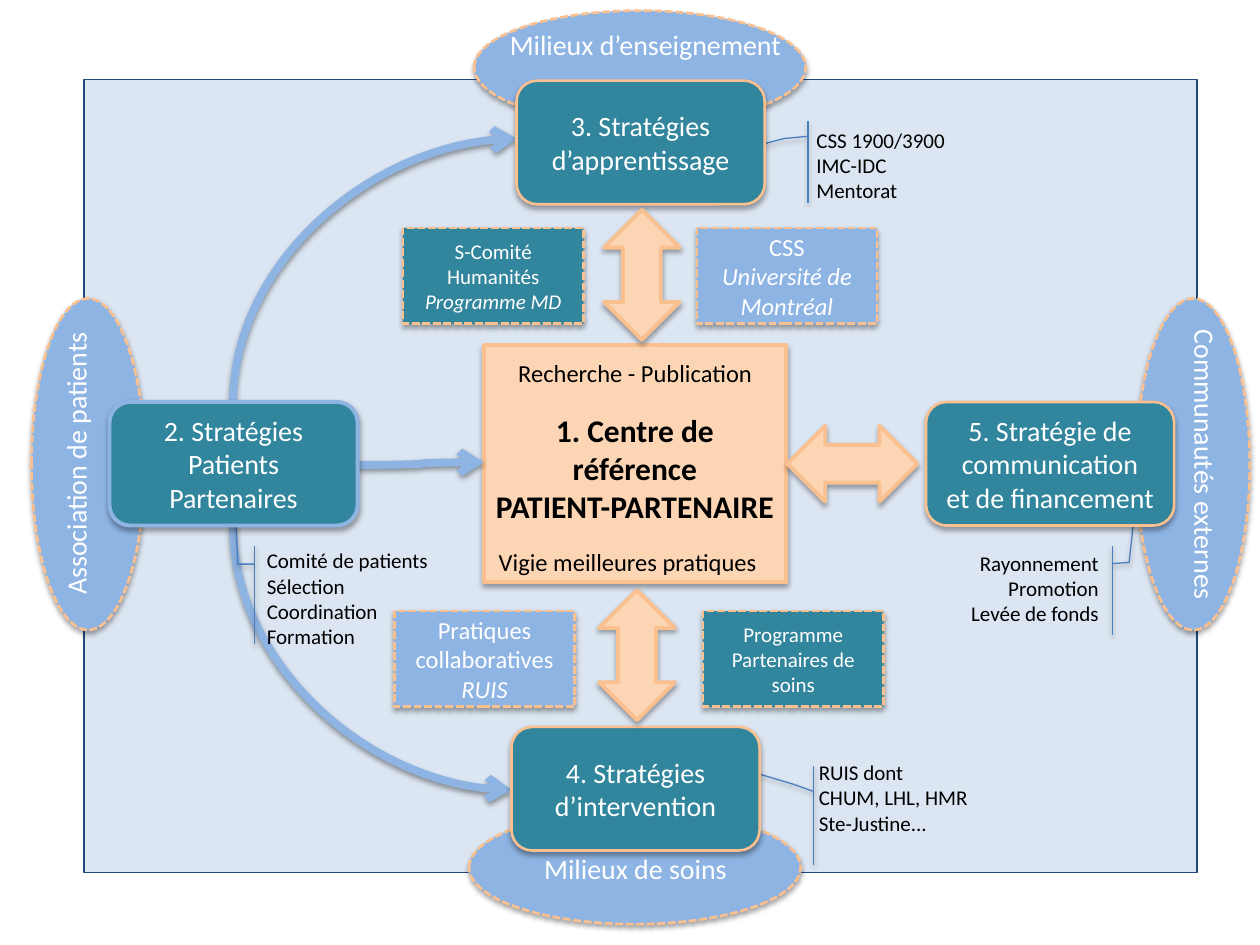
from dataclasses import dataclass

from lxml import etree
from pptx import Presentation
from pptx.dml.color import RGBColor
from pptx.enum.dml import MSO_LINE
from pptx.enum.shapes import MSO_CONNECTOR, MSO_SHAPE
from pptx.enum.text import PP_ALIGN
from pptx.oxml.ns import qn
from pptx.util import Pt

RECTANGLE, ROUNDED = MSO_SHAPE.RECTANGLE, MSO_SHAPE.ROUNDED_RECTANGLE
ELLIPSE, CALLOUT = MSO_SHAPE.OVAL, MSO_SHAPE.LINE_CALLOUT_2_ACCENT_BAR
VERTICAL_ARROW, HORIZONTAL_ARROW = MSO_SHAPE.UP_DOWN_ARROW, MSO_SHAPE.LEFT_RIGHT_ARROW
CURVE, DASH = MSO_CONNECTOR.CURVE, MSO_LINE.SQUARE_DOT
LEFT, CENTER, RIGHT = PP_ALIGN.LEFT, PP_ALIGN.CENTER, PP_ALIGN.RIGHT


@dataclass(frozen=True)
class Theme:
    font: str = "Calibri"
    field: str = "DCE6F2"
    field_edge: str = "1F497D"
    blue: str = "8EB4E3"
    teal: str = "31859C"
    peach: str = "FCD5B5"
    orange: str = "FAC090"
    leader: str = "4B7EBC"
    white: str = "FFFFFF"
    black: str = "000000"
    heading: float = 18
    label: float = 16
    body: float = 14
    note: float = 12


@dataclass(frozen=True)
class Box:
    left: float
    top: float
    width: float
    height: float

    def inner(self, dx, dy, width, height):
        return Box(self.left + dx, self.top + dy, width, height)

    def points(self):
        return [Pt(value) for value in (self.left, self.top, self.width, self.height)]


THEME = Theme()


def apply_format(target, values):
    for name, value in values.items():
        setattr(target, name, value)


def add_shadow(shape, opacity, blur, distance):
    effects = etree.SubElement(shape._element.spPr, qn("a:effectLst"))
    shadow = etree.SubElement(effects, qn("a:outerShdw"), blurRad=str(Pt(blur)),
                              dist=str(Pt(distance)), dir="5400000", rotWithShape="0")
    color = etree.SubElement(shadow, qn("a:srgbClr"), val=THEME.black)
    etree.SubElement(color, qn("a:alpha"), val=str(opacity * 1000))


def add_figure(slide, kind, box, fill, edge, width, dash=None, shadow=True):
    shape = slide.shapes.add_shape(kind, *box.points())
    if fill:
        shape.fill.solid()
        shape.fill.fore_color.rgb = RGBColor.from_string(fill)
    else:
        shape.fill.background()
    shape.line.color.rgb = RGBColor.from_string(edge)
    apply_format(shape.line, {"width": Pt(width), "dash_style": dash})
    if shadow:
        add_shadow(shape, 35, 3.1, 1.8)
    else:
        shape.shadow.inherit = False
    return shape


def write_lines(shape, lines, size, color, align=CENTER, bold=False, italic_last=False, side=7.2):
    frame = shape.text_frame
    apply_format(frame, {"word_wrap": True, "margin_left": Pt(side), "margin_right": Pt(side),
                         "margin_top": Pt(3.6), "margin_bottom": Pt(3.6)})
    for index, line in enumerate(lines):
        paragraph = frame.paragraphs[0] if index == 0 else frame.add_paragraph()
        paragraph.text = line
        paragraph.alignment = align
        is_last = index == len(lines) - 1
        for run in paragraph.runs:
            apply_format(run.font, {"name": THEME.font, "size": Pt(size), "bold": bold,
                                    "italic": italic_last and is_last})
            run.font.color.rgb = RGBColor.from_string(color)


def add_label(slide, box, lines, size, color, direction=None, **options):
    shape = slide.shapes.add_textbox(*box.points())
    write_lines(shape, lines, size, color, **options)
    if direction:
        shape.text_frame._txBody.bodyPr.set("vert", direction)


def add_milieu(slide, box, label_box, text, direction=None):
    add_figure(slide, ELLIPSE, box, THEME.blue, THEME.orange, 1.5, DASH)
    add_label(slide, label_box, [text], THEME.label, THEME.white, direction)


def add_centre(slide, box):
    add_figure(slide, RECTANGLE, box, THEME.peach, THEME.orange, 2.25)
    add_label(slide, box.inner(-3, 34, 178.6, 73),
              ["1. Centre de référence", "PATIENT-PARTENAIRE"],
              THEME.heading, THEME.black, bold=True)
    add_label(slide, box.inner(7, 3.6, 159, 24.5), ["Recherche - Publication"],
              THEME.body, THEME.black)
    add_label(slide, box.inner(1.4, 111.6, 171.4, 24.5), ["Vigie meilleures pratiques"],
              THEME.body, THEME.black, align=LEFT)


def add_strategy(slide, box, lines, edge=THEME.orange, width=1.5):
    shape = add_figure(slide, ROUNDED, box, THEME.teal, edge, width)
    write_lines(shape, lines, THEME.label, THEME.white, side=0 if len(lines) > 1 else 7.2)


def add_partner(slide, box, lines, fill, size, italic_last=True):
    shape = add_figure(slide, RECTANGLE, box, fill, THEME.orange, 1.5, DASH)
    write_lines(shape, lines, size, THEME.white, italic_last=italic_last, side=10.4)


def add_note(slide, box, leader, label_box, lines, align=LEFT):
    """Place a callout bar with its leader; right-aligned notes are mirrored."""
    callout = add_figure(slide, CALLOUT, box, None, THEME.leader, 0.75)
    for index, value in enumerate(leader):
        callout.adjustments[index] = value
    if align == RIGHT:
        callout._element.spPr.find(qn("a:xfrm")).set("flipH", "1")
    add_label(slide, label_box, lines, THEME.note, THEME.black, align=align)


def add_flow(slide, start, end):
    connector = slide.shapes.add_connector(CURVE, *(Pt(value) for value in (*start, *end)))
    connector.line.color.rgb = RGBColor.from_string(THEME.blue)
    connector.line.width = Pt(4.5)
    etree.SubElement(connector.line._get_or_add_ln(), qn("a:tailEnd"), type="arrow")
    add_shadow(connector, 38, 3.1, 1.6)
    return connector


def add_arc(slide, start, end):
    """Draw a quarter curve that leaves vertically and arrives horizontally."""
    center_x, center_y = (start[0] + end[0]) / 2, (start[1] + end[1]) / 2
    rise = end[1] - start[1]
    half_width, half_height = abs(rise) / 2, (end[0] - start[0]) / 2
    if rise < 0:
        half_height, rotation = -half_height, 90
    else:
        rotation = 270
    connector = add_flow(slide, (center_x + half_width, center_y - half_height),
                         (center_x - half_width, center_y + half_height))
    properties = connector._element.spPr
    properties.find(qn("a:xfrm")).set("rot", str(rotation * 60000))
    properties.find(qn("a:prstGeom")).set("prst", "curvedConnector2")


def build_slide(slide):
    add_figure(slide, RECTANGLE, Box(48, 45.4, 636, 453), THEME.field, THEME.field_edge,
               0.75, shadow=False)

    tall, wide = (64.8, 189.4), (189.4, 64.8)
    add_milieu(slide, Box(18, 170.6, *tall), Box(30, 175, 33.8, 180),
               "Association de patients", "vert270")
    add_milieu(slide, Box(649.4, 170.6, *tall), Box(668.2, 169.2, 33.8, 192.2),
               "Communautés externes", "vert")
    add_milieu(slide, Box(271, 6.1, *wide), Box(280.6, 12.2, 176.4, 33.8),
               "Milieux d’enseignement")
    add_milieu(slide, Box(268.1, 463.3, *wide), Box(299.5, 483.1, 127.4, 33.8),
               "Milieux de soins")

    add_centre(slide, Box(276.5, 197.3, 172.8, 135.4))

    add_arc(slide, (133.2, 229.7), (295.2, 79.2))
    add_arc(slide, (133.2, 300.2), (292.3, 451.4))
    add_flow(slide, (204.5, 265.7), (276.5, 264.2))

    add_note(slide, Box(472.3, 69.1, 128.2, 46.8),
             (0.188, -0.083, 0.214, -0.188, 0.576, -0.696), Box(459.4, 69.1, 106.6, 51.1),
             ["CSS 1900/3900", "IMC-IDC", "Mentorat"])
    add_note(slide, Box(493.2, 437.8, 113, 56.2),
             (0.258, -0.25, 0.188, -0.346, -0.004, -0.664), Box(460.8, 430.6, 99.4, 51.1),
             ["RUIS dont\vCHUM, LHL, HMR", "Ste-Justine..."])
    add_note(slide, Box(513.4, 311.8, 113, 51.1),
             (0.201, -0.083, 0.188, -0.167, -0.259, -0.189), Box(522, 311, 113, 51.1),
             ["Rayonnement", "Promotion", "Levée de fonds"], RIGHT)
    add_note(slide, Box(154.8, 311.8, 113, 56.2),
             (0.188, -0.083, 0.188, -0.167, -0.243, -0.177), Box(145.4, 309.6, 129.6, 65.5),
             ["Comité de patients", "Sélection", "Coordination", "Formation"])

    strategy = (141.8, 70.6)
    add_strategy(slide, Box(62.6, 229.7, *strategy),
                 ["2. Stratégies\vPatients\vPartenaires"], THEME.blue, 2.25)
    add_strategy(slide, Box(295.2, 46.1, *strategy), ["3. Stratégies d’apprentissage"])
    add_strategy(slide, Box(292.3, 415.4, *strategy), ["4. Stratégies d’intervention"])
    add_strategy(slide, Box(529.2, 229.7, *strategy),
                 ["5. Stratégie de communication", "et de financement"])

    partner = (103, 54.7)
    add_partner(slide, Box(230.4, 130.3, *partner),
                ["S-Comité", "Humanités", "Programme MD"], THEME.teal, THEME.note)
    add_partner(slide, Box(398.2, 130.3, *partner),
                ["CSS", "Université de Montréal"], THEME.blue, THEME.body)
    add_partner(slide, Box(225.4, 349.2, *partner),
                ["Pratiques collaboratives", "RUIS"], THEME.blue, THEME.body)
    add_partner(slide, Box(401.8, 349.2, *partner),
                ["Programme Partenaires de soins"], THEME.teal, THEME.note, italic_last=False)

    for kind, box in ((VERTICAL_ARROW, Box(345.2, 119.9, 43.2, 74.2)),
                      (VERTICAL_ARROW, Box(342.4, 337.3, 43.2, 74.2)),
                      (HORIZONTAL_ARROW, Box(450, 243.4, 74.2, 43.2))):
        add_figure(slide, kind, box, THEME.peach, THEME.orange, 2.25)


def main():
    presentation = Presentation()
    presentation.slide_width, presentation.slide_height = Pt(720), Pt(540)
    build_slide(presentation.slides.add_slide(presentation.slide_layouts[6]))
    presentation.save("out.pptx")


if __name__ == "__main__":
    main()
